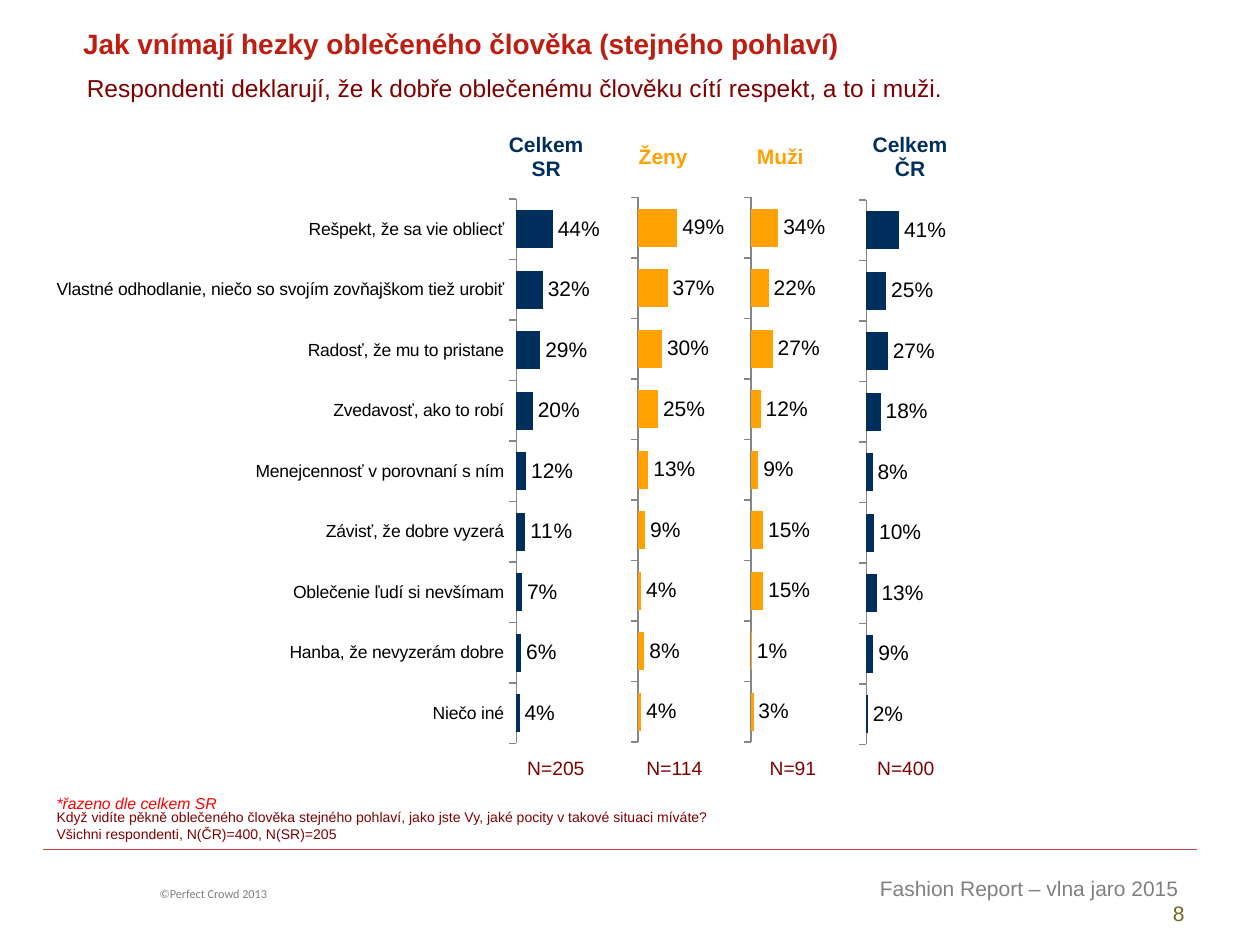
"""Build the slide comparing feelings about well-dressed people across four groups."""
from dataclasses import dataclass

from pptx import Presentation
from pptx.chart.data import CategoryChartData
from pptx.dml.color import RGBColor
from pptx.enum.chart import XL_CHART_TYPE, XL_LABEL_POSITION, XL_TICK_LABEL_POSITION, XL_TICK_MARK
from pptx.enum.shapes import MSO_CONNECTOR
from pptx.enum.text import MSO_ANCHOR, MSO_AUTO_SIZE, PP_ALIGN
from pptx.oxml import parse_xml
from pptx.oxml.ns import nsdecls, qn
from pptx.util import Cm, Pt

BAR = XL_CHART_TYPE.BAR_CLUSTERED
OUTSIDE_END = XL_LABEL_POSITION.OUTSIDE_END
NO_LABELS = XL_TICK_LABEL_POSITION.NONE
LOW_LABELS = XL_TICK_LABEL_POSITION.LOW
TICK_OUT, TICK_NONE = XL_TICK_MARK.OUTSIDE, XL_TICK_MARK.NONE
LEFT, CENTER, RIGHT, JUSTIFY = PP_ALIGN.LEFT, PP_ALIGN.CENTER, PP_ALIGN.RIGHT, PP_ALIGN.JUSTIFY
TOP, MIDDLE = MSO_ANCHOR.TOP, MSO_ANCHOR.MIDDLE

COLORS = {
    "navy": "002F5E", "orange": "FFA102", "maroon": "800000", "title": "BE1E11",
    "red": "FF0000", "gray": "808080", "olive": "756522", "rule": "BF4C48",
    "axis": "868686", "black": "000000",
}
FEELINGS = [
    "Niečo iné", "Hanba, že nevyzerám dobre", "Oblečenie ľudí si nevšímam",
    "Závisť, že dobre vyzerá", "Menejcennosť v porovnaní s ním", "Zvedavosť, ako to robí",
    "Radosť, že mu to pristane", "Vlastné odhodlanie, niečo so svojím zovňajškom tiež urobiť",
    "Rešpekt, že sa vie obliecť",
]
NUMBERS = [str(number) for number in range(1, len(FEELINGS) + 1)]


@dataclass
class Label:
    left: float
    top: float
    width: float
    height: float
    text: str
    size: float
    color: str
    font: str = "Arial"
    align: PP_ALIGN = LEFT
    bold: bool = False
    italic: bool = False
    wrap: bool = True


@dataclass
class Bars:
    left: float
    top: float
    width: float
    color: str
    values: list[int]
    plot_left: float
    plot_width: float = 0.26
    named: bool = False


@dataclass
class Strip:
    left: float
    top: float
    height: float
    widths: list[float]
    cells: list[tuple[str, str]]
    size: float
    bold: bool = False


TITLE = Label(1.42, 0.41, 19.08, 0.94, "Jak vnímají hezky oblečeného člověka (stejného pohlaví)",
              16, "title", bold=True)
FOOTER = Label(14.71, 17.53, 9.42, 1.27, "Fashion Report – vlna jaro 2015 ", 12, "gray", align=RIGHT)
LABELS = [
    Label(2.97, 17.75, 7.39, 0.56, "©Perfect Crowd 2013", 7, "gray", font="Calibri"),
    Label(0.89, 16.18, 23.01, 0.94,
          "Když vidíte pěkně oblečeného člověka stejného pohlaví, jako jste Vy, "
          "jaké pocity v takové situaci míváte?\nVšichni respondenti, N(ČR)=400, N(SR)=205",
          8, "maroon"),
    Label(1.5, 1.35, 22.81, 2.06,
          "Respondenti deklarují, že k dobře oblečenému člověku cítí respekt, a to i muži.",
          14, "maroon", align=JUSTIFY),
    Label(0.89, 15.88, 3.89, 0.64, "*řazeno dle celkem SR", 9, "red", italic=True, wrap=False),
]
CHARTS = [
    Bars(13.59, 3.2, 6.22, "navy", [2, 9, 13, 10, 8, 18, 27, 25, 41], 0.623),
    Bars(11.3, 3.15, 6.22, "orange", [3, 1, 15, 15, 9, 12, 27, 22, 34], 0.618),
    Bars(8.99, 3.15, 6.22, "orange", [4, 8, 4, 9, 13, 25, 30, 37, 49], 0.623),
    Bars(0.33, 3.18, 12.52, "navy", [4, 6, 7, 11, 12, 20, 29, 32, 44], 0.805, 0.134, True),
]
STRIPS = [
    Strip(9.83, 2.59, 1.12, [2.36, 2.36, 2.36, 2.87],
          [("Celkem\nSR", "navy"), ("Ženy", "orange"), ("Muži", "orange"), ("Celkem\nČR", "navy")],
          12, True),
    Strip(10.01, 15.21, 0.53, [2.39, 2.39, 2.39, 2.16],
          [(count, "maroon") for count in ("N=205", "N=114", "N=91", "N=400")], 11),
]


def rgb(name: str) -> RGBColor:
    return RGBColor.from_string(COLORS[name])


def style_font(font, size: float, color: str, name: str = "Arial", bold=False, italic=False) -> None:
    font.name, font.size, font.bold, font.italic = name, Pt(size), bold, italic
    font.color.rgb = rgb(color)


def fill_label(box, label: Label):
    box.left, box.top, box.width, box.height = map(
        Cm, (label.left, label.top, label.width, label.height))
    frame = box.text_frame
    frame.text = label.text
    frame.word_wrap, frame.auto_size = label.wrap, MSO_AUTO_SIZE.NONE
    frame.vertical_anchor = TOP
    for para in frame.paragraphs:
        para.alignment = label.align
        style_font(para.font, label.size, label.color, label.font, label.bold, label.italic)
    return box


def add_label(page, label: Label):
    return fill_label(page.shapes.add_textbox(0, 0, 0, 0), label)


def add_strip(page, strip: Strip) -> None:
    table = page.shapes.add_table(1, len(strip.cells), Cm(strip.left), Cm(strip.top),
                                  Cm(sum(strip.widths)), Cm(strip.height)).table
    table.first_row = table.horz_banding = False
    for column, width, cell, (text, color) in zip(
            table.columns, strip.widths, table.rows[0].cells, strip.cells):
        column.width = Cm(width)
        cell.fill.background()
        cell.margin_left = cell.margin_right = cell.margin_top = Cm(0.03)
        cell.margin_bottom = 0
        cell.vertical_anchor = MIDDLE
        cell.text = text
        for para in cell.text_frame.paragraphs:
            para.alignment = CENTER
            style_font(para.font, strip.size, color, bold=strip.bold)


def place_plot(chart, bars: Bars) -> None:
    area = chart.plots[0]._element.getparent()
    for old in area.findall(qn("c:layout")):
        area.remove(old)
    sizes = {"x": bars.plot_left, "y": 0.065, "w": bars.plot_width, "h": 0.859}
    parts = "".join(f'<c:{key} val="{value}"/>' for key, value in sizes.items())
    area.insert(0, parse_xml(
        f'<c:layout {nsdecls("c")}><c:manualLayout><c:layoutTarget val="inner"/>'
        f'<c:xMode val="edge"/><c:yMode val="edge"/>{parts}</c:manualLayout></c:layout>'))
    area.getparent().addnext(parse_xml(
        f'<c:spPr {nsdecls("c", "a")}><a:noFill/><a:ln><a:noFill/></a:ln></c:spPr>'))


def add_bars(page, bars: Bars) -> None:
    data = CategoryChartData()
    data.categories = FEELINGS if bars.named else NUMBERS
    data.add_series("Series 1", bars.values)
    chart = page.shapes.add_chart(BAR, Cm(bars.left), Cm(bars.top), Cm(bars.width),
                                  Cm(12.78), data).chart
    chart.has_legend = chart.has_title = False
    style_font(chart.font, 12, "black")
    place_plot(chart, bars)
    scale, groups = chart.value_axis, chart.category_axis
    scale.minimum_scale, scale.maximum_scale = 0, 100
    scale.has_major_gridlines = scale.visible = False
    groups.major_tick_mark, groups.minor_tick_mark = TICK_OUT, TICK_NONE
    groups.tick_label_position = LOW_LABELS if bars.named else NO_LABELS
    style_font(groups.tick_labels.font, 10 if bars.named else 11, "black")
    groups.format.line.color.rgb = rgb("axis")
    plot = chart.plots[0]
    plot.gap_width, plot.vary_by_categories = 60, False
    plot.series[0].format.fill.solid()
    plot.series[0].format.fill.fore_color.rgb = rgb(bars.color)
    plot.has_data_labels = True
    labels = plot.data_labels
    labels.show_value, labels.position = True, OUTSIDE_END
    labels.number_format, labels.number_format_is_linked = '#,##0"%"', False
    style_font(labels.font, 12, "black")


def main() -> None:
    deck = Presentation()
    deck.slide_width, deck.slide_height = Cm(25.4), Cm(19.05)
    page = deck.slides.add_slide(deck.slide_layouts[5])
    fill_label(page.shapes.title, TITLE)
    rule = page.shapes.add_connector(MSO_CONNECTOR.STRAIGHT, Cm(0.86), Cm(17.12), Cm(24.13), Cm(17.12))
    rule.line.color.rgb, rule.line.width = rgb("rule"), Pt(0.75)
    rule._element.spPr.append(parse_xml(f'<a:effectLst {nsdecls("a")}/>'))
    for label in LABELS:
        add_label(page, label)
    footer = add_label(page, FOOTER).text_frame.paragraphs[0]
    footer.add_line_break()
    span = footer.add_run()
    span.text, span.font.color.rgb = "8", rgb("olive")
    for bars in CHARTS:
        add_bars(page, bars)
    for strip in STRIPS:
        add_strip(page, strip)
    deck.save("out.pptx")


if __name__ == "__main__":
    main()
